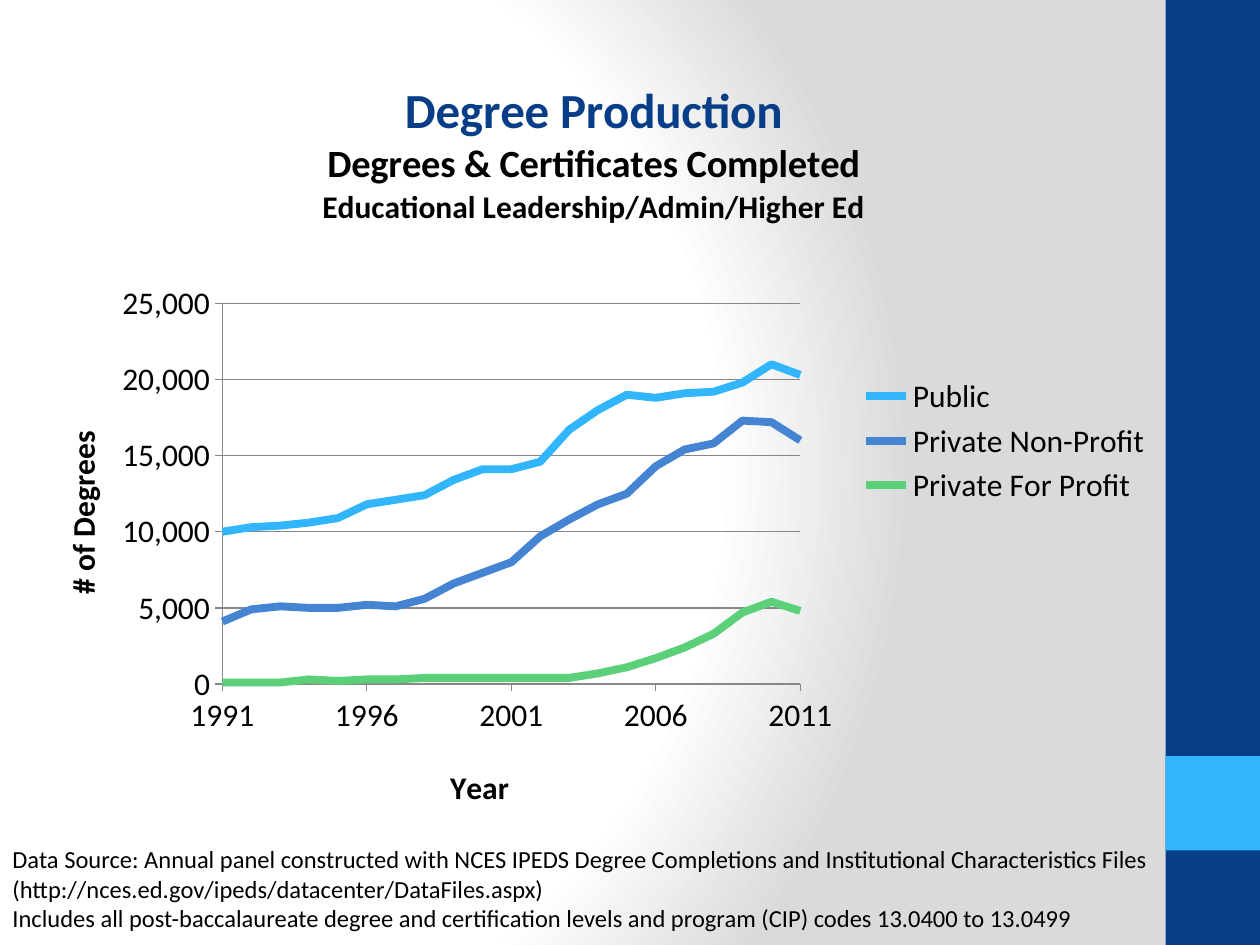
from pptx import Presentation
from pptx.chart.data import XyChartData
from pptx.dml.color import RGBColor
from pptx.enum.chart import XL_CHART_TYPE, XL_LEGEND_POSITION, XL_MARKER_STYLE, XL_TICK_MARK
from pptx.enum.shapes import MSO_SHAPE
from pptx.oxml import parse_xml
from pptx.oxml.ns import nsdecls, qn
from pptx.util import Pt

FONT = "Calibri"
NAVY, SKY, BLACK, GREY = "073E87", "31B6FD", "000000", "888888"
YEARS = range(1991, 2012)
SERIES = [
    ("Public", SKY,
     [10000, 10300, 10400, 10600, 10900, 11800, 12100, 12400, 13400, 14100, 14100,
      14600, 16700, 18000, 19000, 18800, 19100, 19200, 19800, 21000, 20300]),
    ("Private Non-Profit", "4584D3",
     [4100, 4900, 5100, 5000, 5000, 5200, 5100, 5600, 6600, 7300, 8000,
      9700, 10800, 11800, 12500, 14300, 15400, 15800, 17300, 17200, 16000]),
    ("Private For Profit", "5BD078",
     [100, 100, 100, 300, 200, 300, 300, 400, 400, 400, 400,
      400, 400, 700, 1100, 1700, 2400, 3300, 4700, 5400, 4800]),
]
TITLE = [
    ("Degree Production", 28, NAVY),
    ("Degrees & Certificates Completed", 22, BLACK),
    ("Educational Leadership/Admin/Higher Ed", 18, BLACK),
]
NOTES = [
    "Data Source: Annual panel constructed with NCES IPEDS Degree Completions and Institutional Characteristics Files",
    "(http://nces.ed.gov/ipeds/datacenter/DataFiles.aspx)",
    "Includes all post-baccalaureate degree and certification levels and program (CIP) codes 13.0400 to 13.0499",
]


def rgb(color):
    """Turn a hex string into a colour."""
    return RGBColor.from_string(color)


def set_font(font, size, color=BLACK, bold=False):
    """Set the face, size, colour and weight of a font."""
    font.name, font.size, font.bold = FONT, Pt(size), bold
    font.color.rgb = rgb(color)


def set_background(s):
    """Fill the background with a circular gradient from white to grey."""
    s.background.fill.solid()
    solid = s.background._cSld.find(".//" + qn("a:solidFill"))
    stops = "".join(f'<a:gs pos="{pos * 1000}"><a:srgbClr val="{color}"/></a:gs>'
                    for pos, color in ((0, "FFFFFF"), (75, "FFFFFF"), (100, "DADADA")))
    solid.getparent().replace(solid, parse_xml(
        f'<a:gradFill {nsdecls("a")} rotWithShape="1"><a:gsLst>{stops}</a:gsLst><a:path path="circle">'
        '<a:fillToRect l="20000" t="50000" r="100000" b="50000"/></a:path></a:gradFill>'))


def add_block(s, x, y, w, h, color):
    """Add a plain filled rectangle."""
    sp = s.shapes.add_shape(MSO_SHAPE.RECTANGLE, Pt(x), Pt(y), Pt(w), Pt(h))
    sp.shadow.inherit = False
    sp.fill.solid()
    sp.fill.fore_color.rgb = rgb(color)
    sp.line.fill.background()


def add_side_band(s, x, y, w, h):
    """Add the side band with its square accent."""
    add_block(s, x, y, w, h, NAVY)
    add_block(s, x, y + h - 2 * w, w, w, SKY)


def place(element, x, y, w=None, h=None, inner=False):
    """Give a chart part a manual layout in fractions of the chart."""
    for old in element.findall(qn("c:layout")):
        element.remove(old)
    values = [("layoutTarget", "inner")] if inner else []
    values += [("xMode", "edge"), ("yMode", "edge"), ("x", x), ("y", y)]
    values += [("w", w), ("h", h)] if w else []
    parts = "".join(f'<c:{name} val="{value}"/>' for name, value in values)
    first = element[0].tag in (qn("c:tx"), qn("c:legendPos"))
    element.insert(int(first), parse_xml(
        f'<c:layout {nsdecls("c")}><c:manualLayout>{parts}</c:manualLayout></c:layout>'))


def style_axis(axis, title, x, y, low, high, step, number_format):
    """Set the title, scale, ticks and line of an axis."""
    axis.minimum_scale, axis.maximum_scale, axis.major_unit = low, high, step
    axis.major_tick_mark, axis.minor_tick_mark = XL_TICK_MARK.OUTSIDE, XL_TICK_MARK.NONE
    axis.tick_labels.number_format = number_format
    axis.tick_labels.number_format_is_linked = False
    axis.format.line.color.rgb = rgb(GREY)
    axis.format.line.width = Pt(0.75)
    p = axis.axis_title.text_frame.paragraphs[0]
    p.text = title
    set_font(p.font, 18, bold=True)
    place(axis.axis_title._element, x, y)


def add_degree_chart(s, x, y, w, h):
    """Add the line chart of degrees by year and sector."""
    data = XyChartData()
    for name, _, values in SERIES:
        series = data.add_series(name)
        for year, value in zip(YEARS, values):
            series.add_data_point(year, value)
    chart = s.shapes.add_chart(XL_CHART_TYPE.XY_SCATTER_LINES_NO_MARKERS,
                               Pt(x), Pt(y), Pt(w), Pt(h), data).chart
    set_font(chart.font, 18)
    chart.plots[0].vary_by_categories = False
    for series, (_, color, _) in zip(chart.plots[0].series, SERIES):
        series.smooth = False
        series.marker.style = XL_MARKER_STYLE.NONE
        series.format.line.color.rgb = rgb(color)
        series.format.line.width = Pt(4.5)

    tf = chart.chart_title.text_frame
    for i, (text, size, color) in enumerate(TITLE):
        p = tf.paragraphs[0] if i == 0 else tf.add_paragraph()
        p.text = text
        set_font(p.font, size, color, True)
    chart.chart_title.include_in_layout = False
    place(chart.chart_title._element, 0.26, 0.03)

    style_axis(chart.category_axis, "Year", 0.37, 0.91, 1991, 2011, 5, "General")
    style_axis(chart.value_axis, "# of Degrees", 0.03, 0.48, 0, 25000, 5000, "#,##0")
    chart.category_axis.has_major_gridlines = False
    grid = chart.value_axis.major_gridlines.format.line
    grid.color.rgb = rgb(GREY)
    grid.width = Pt(0.75)

    chart.has_legend = True
    chart.legend.position = XL_LEGEND_POSITION.RIGHT
    chart.legend.include_in_layout = False
    place(chart.legend._element, 0.73, 0.41, 0.26, 0.18)
    place(chart._chartSpace.chart.plotArea, 0.176, 0.323, 0.505, 0.49, inner=True)


def add_source_note(s, x, y, w, h):
    """Add the data source lines."""
    tf = s.shapes.add_textbox(Pt(x), Pt(y), Pt(w), Pt(h)).text_frame
    tf.word_wrap = True
    for i, text in enumerate(NOTES):
        p = tf.paragraphs[0] if i == 0 else tf.add_paragraph()
        p.text = text
        set_font(p.font, 14)


def main():
    """Build and save the slide."""
    prs = Presentation()
    prs.slide_width, prs.slide_height = Pt(720), Pt(540)
    s = prs.slides.add_slide(prs.slide_layouts[6])
    set_background(s)
    add_side_band(s, 666, 0, 54, 540)
    add_degree_chart(s, 12, 30, 654, 444)
    add_source_note(s, 0, 479, 666, 58)
    prs.save("out.pptx")


if __name__ == "__main__":
    main()
